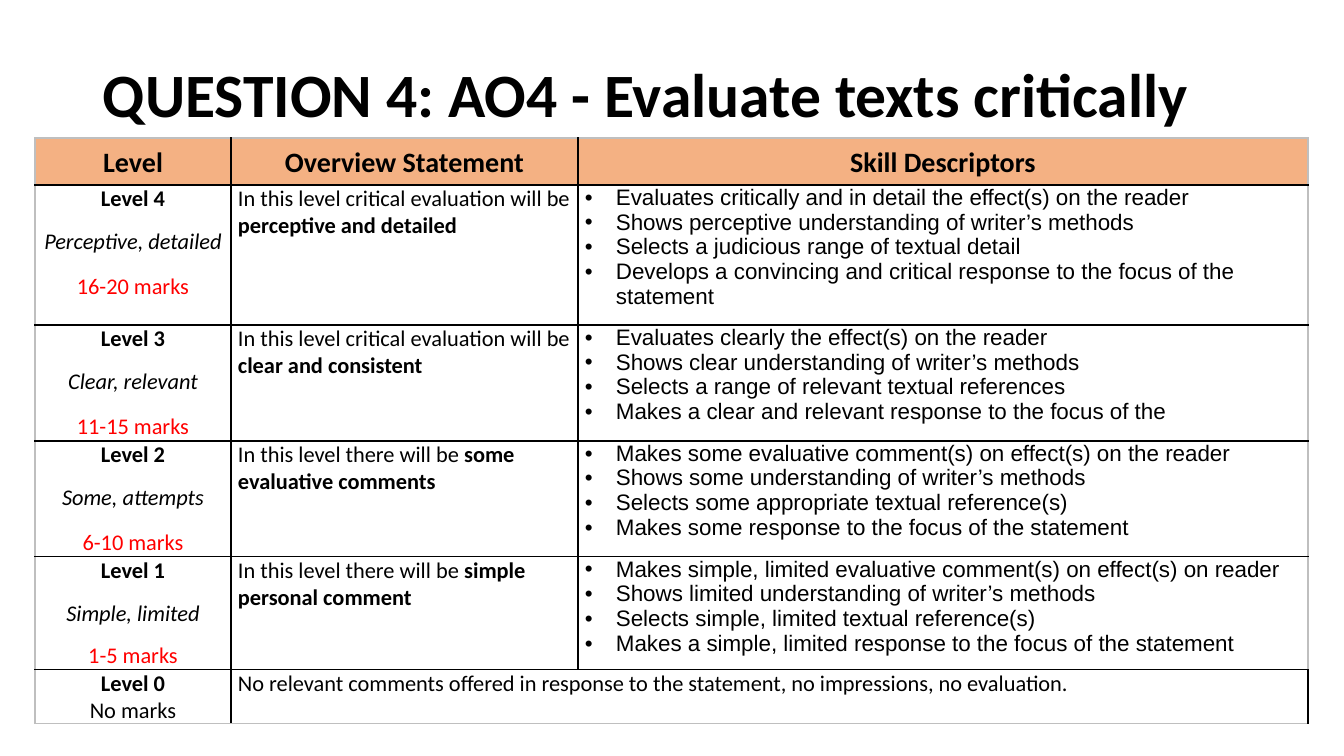
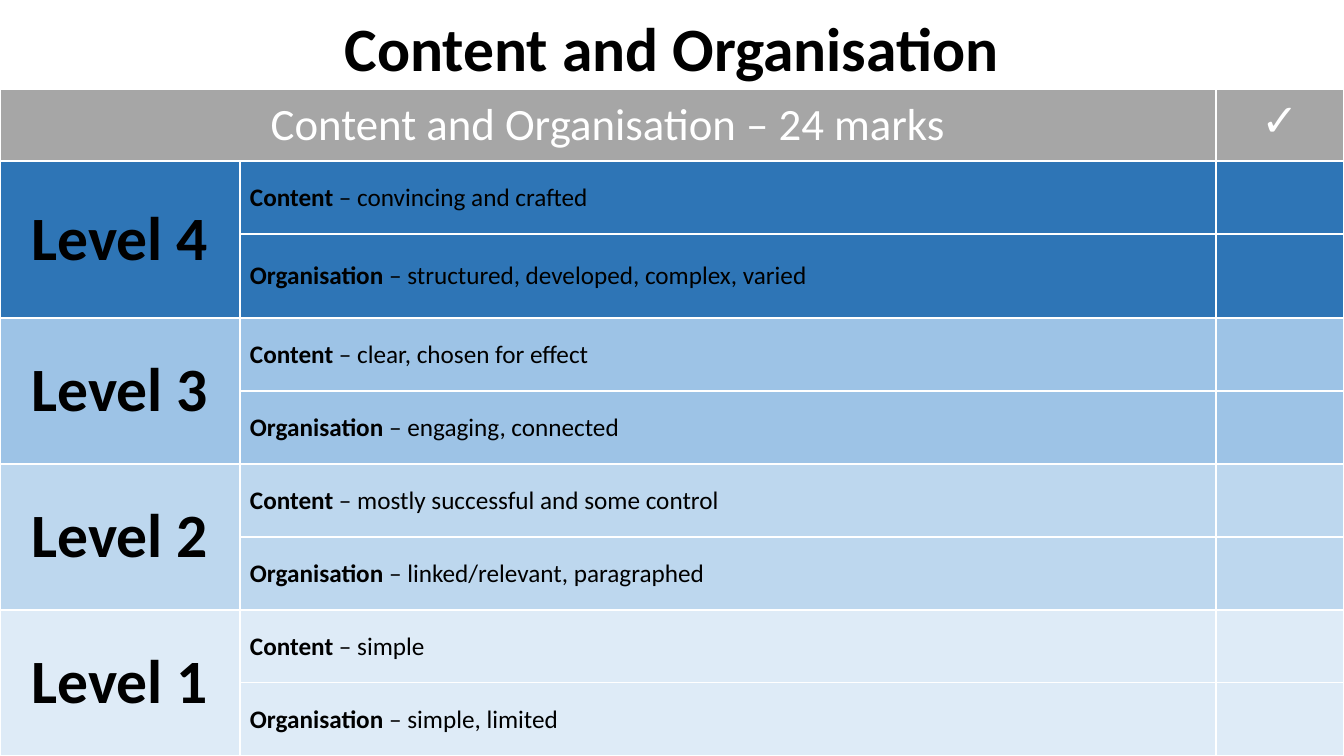
"""Build two slides of assessment levels: evaluating texts, and content and organisation."""
from dataclasses import dataclass

from lxml.etree import SubElement
from pptx import Presentation
from pptx.dml.color import RGBColor
from pptx.enum.text import MSO_ANCHOR, PP_ALIGN
from pptx.oxml import parse_xml
from pptx.oxml.ns import nsdecls, qn
from pptx.util import Pt

PX = 9071


@dataclass(frozen=True)
class Theme:
    ink: str = "000000"
    paper: str = "FFFFFF"
    marks: str = "FF0000"
    header: str = "F4B183"
    banner: str = "A6A6A6"
    frame: str = "BFBFBF"
    blues: tuple = ("2E75B6", "9DC3E6", "BDD7EE", "DEEBF7")
    font: str = "Calibri"
    list_font: str = "Arial"
    title: int = 44
    banner_size: int = 32
    header_size: int = 20
    criterion: int = 18
    body: int = 16


theme = Theme()


def write(frame, text, size=theme.body, color=theme.ink, font=theme.font, bold=False, italic=False,
          align=PP_ALIGN.LEFT, spacing=None, before=0, bullet=False, inline=False):
    paragraph = frame.paragraphs[-1]
    if paragraph.runs and not inline:
        paragraph = frame.add_paragraph()
    if not inline:
        paragraph.alignment = align
        paragraph.space_before = Pt(before)
        if spacing:
            paragraph.line_spacing = spacing
    if bullet:
        properties = paragraph._p.get_or_add_pPr()
        properties.set("marL", str(31 * PX))
        properties.set("indent", str(-31 * PX))
        SubElement(properties, qn("a:buFont"), typeface=font)
        SubElement(properties, qn("a:buChar"), char="•")
    run = paragraph.add_run()
    run.text = text
    run.font.name = font
    run.font.size = Pt(size)
    run.font.bold = bold
    run.font.italic = italic
    run.font.color.rgb = RGBColor.from_string(color)


def build_table(slide, left, top, widths, heights, fills, inner, outer, side, end, anchor):
    table = slide.shapes.add_table(len(heights), len(widths), left * PX, top * PX,
                                   sum(widths) * PX, sum(heights) * PX).table
    table.first_row = table.horz_banding = False
    for column, width in zip(table.columns, widths):
        column.width = width * PX
    for r, (height, fill) in enumerate(zip(heights, fills)):
        table.rows[r].height = height * PX
        for c in range(len(widths)):
            cell = table.cell(r, c)
            cell.margin_left = cell.margin_right = side * PX
            cell.margin_top = cell.margin_bottom = end * PX
            cell.vertical_anchor = anchor
            cell.fill.solid()
            cell.fill.fore_color.rgb = RGBColor.from_string(fill)
            at_edge = {"L": c == 0, "R": c == len(widths) - 1, "T": r == 0, "B": r == len(heights) - 1}
            for position, (edge, is_outer) in enumerate(at_edge.items()):
                color = outer if is_outer else inner
                cell._tc.get_or_add_tcPr().insert(position, parse_xml(
                    f'<a:ln{edge} {nsdecls("a")} w="12700"><a:solidFill>'
                    f'<a:srgbClr val="{color}"/></a:solidFill></a:ln{edge}>'))
    return table


deck = Presentation()
deck.slide_width = 1344 * PX
deck.slide_height = 756 * PX

headings = [
    ("QUESTION 4: AO4 - Evaluate texts critically", (93, 25, 1159, 146), PP_ALIGN.LEFT),
    ("Content and Organisation", (0, 12, 1344, 80), PP_ALIGN.CENTER),
]
for heading, box, align in headings:
    slide = deck.slides.add_slide(deck.slide_layouts[6])
    title = slide.shapes.add_textbox(*(n * PX for n in box)).text_frame
    title.word_wrap = True
    title.vertical_anchor = MSO_ANCHOR.MIDDLE
    write(title, heading, size=theme.title, bold=True, align=align, spacing=0.9)
evaluation, organisation = deck.slides

evaluation_levels = [
    ("Level 4", "Perceptive, detailed", "16-20 marks", 13,
     "In this level critical evaluation will be ", "perceptive and detailed",
     ["Evaluates critically and in detail the effect(s) on the reader",
      "Shows perceptive understanding of writer’s methods",
      "Selects a judicious range of textual detail",
      "Develops a convincing and critical response to the focus of the statement"]),
    ("Level 3", "Clear, relevant", "11-15 marks", 13,
     "In this level critical evaluation will be ", "clear and consistent",
     ["Evaluates clearly the effect(s) on the reader",
      "Shows clear understanding of writer’s methods",
      "Selects a range of relevant textual references",
      "Makes a clear and relevant response to the focus of the"]),
    ("Level 2", "Some, attempts", "6-10 marks", 13,
     "In this level there will be ", "some evaluative comments",
     ["Makes some evaluative comment(s) on effect(s) on the reader",
      "Shows some understanding of writer’s methods",
      "Selects some appropriate textual reference(s)",
      "Makes some response to the focus of the statement"]),
    ("Level 1", "Simple, limited", "1-5 marks", 11,
     "In this level there will be ", "simple personal comment",
     ["Makes simple, limited evaluative comment(s) on effect(s) on reader",
      "Shows limited understanding of writer’s methods",
      "Selects simple, limited textual reference(s)",
      "Makes a simple, limited response to the focus of the statement"]),
]
rubric = build_table(evaluation, 35, 138, [196, 347, 730], [47, 140, 116, 116, 113, 54],
                     [theme.header] + [theme.paper] * 5, inner=theme.ink, outer=theme.frame,
                     side=7, end=0, anchor=MSO_ANCHOR.TOP)
for c, label in enumerate(["Level", "Overview Statement", "Skill Descriptors"]):
    rubric.cell(0, c).vertical_anchor = MSO_ANCHOR.MIDDLE
    write(rubric.cell(0, c).text_frame, label, size=theme.header_size, bold=True,
          align=PP_ALIGN.CENTER, spacing=1.07)
for r, (level, summary, marks, gap, lead, emphasis, skills) in enumerate(evaluation_levels, 1):
    grade, overview, descriptors = (rubric.cell(r, c).text_frame for c in range(3))
    write(grade, level, bold=True, align=PP_ALIGN.CENTER)
    write(grade, summary, italic=True, align=PP_ALIGN.CENTER, before=11)
    write(grade, marks, color=theme.marks, align=PP_ALIGN.CENTER, before=gap)
    write(overview, lead)
    write(overview, emphasis, bold=True, inline=True)
    for skill in skills:
        write(descriptors, skill, font=theme.list_font, bullet=True)
rubric.cell(5, 1).merge(rubric.cell(5, 2))
write(rubric.cell(5, 0).text_frame, "Level 0", bold=True, align=PP_ALIGN.CENTER)
write(rubric.cell(5, 0).text_frame, "No marks", align=PP_ALIGN.CENTER)
write(rubric.cell(5, 1).text_frame,
      "No relevant comments offered in response to the statement, no impressions, no evaluation.")

organisation_levels = [
    ("Level 4", "convincing and crafted", "structured, developed, complex, varied"),
    ("Level 3", "clear, chosen for effect", "engaging, connected"),
    ("Level 2", "mostly successful and some control", "linked/relevant, paragraphed"),
    ("Level 1", "simple", "simple, limited"),
]
checklist = build_table(organisation, 0, 89, [240, 976, 128], [72, 73, 84] + [73] * 6,
                        [theme.banner] + [blue for blue in theme.blues for _ in range(2)],
                        inner=theme.paper, outer=theme.paper, side=10, end=5, anchor=MSO_ANCHOR.MIDDLE)
checklist.cell(0, 0).merge(checklist.cell(0, 1))
checklist.cell(0, 2).vertical_anchor = MSO_ANCHOR.TOP
for c, label in [(0, "Content and Organisation – 24 marks"), (2, "✓")]:
    write(checklist.cell(0, c).text_frame, label, size=theme.banner_size, color=theme.paper,
          align=PP_ALIGN.CENTER)
for i, (level, *criteria) in enumerate(organisation_levels):
    first = 1 + 2 * i
    checklist.cell(first, 0).merge(checklist.cell(first + 1, 0))
    write(checklist.cell(first, 0).text_frame, level, size=theme.title, bold=True, align=PP_ALIGN.CENTER)
    for r, (aspect, criterion) in enumerate(zip(["Content", "Organisation"], criteria), first):
        write(checklist.cell(r, 1).text_frame, aspect, size=theme.criterion, bold=True)
        write(checklist.cell(r, 1).text_frame, f" – {criterion}", size=theme.criterion, inline=True)

deck.save("out.pptx")
